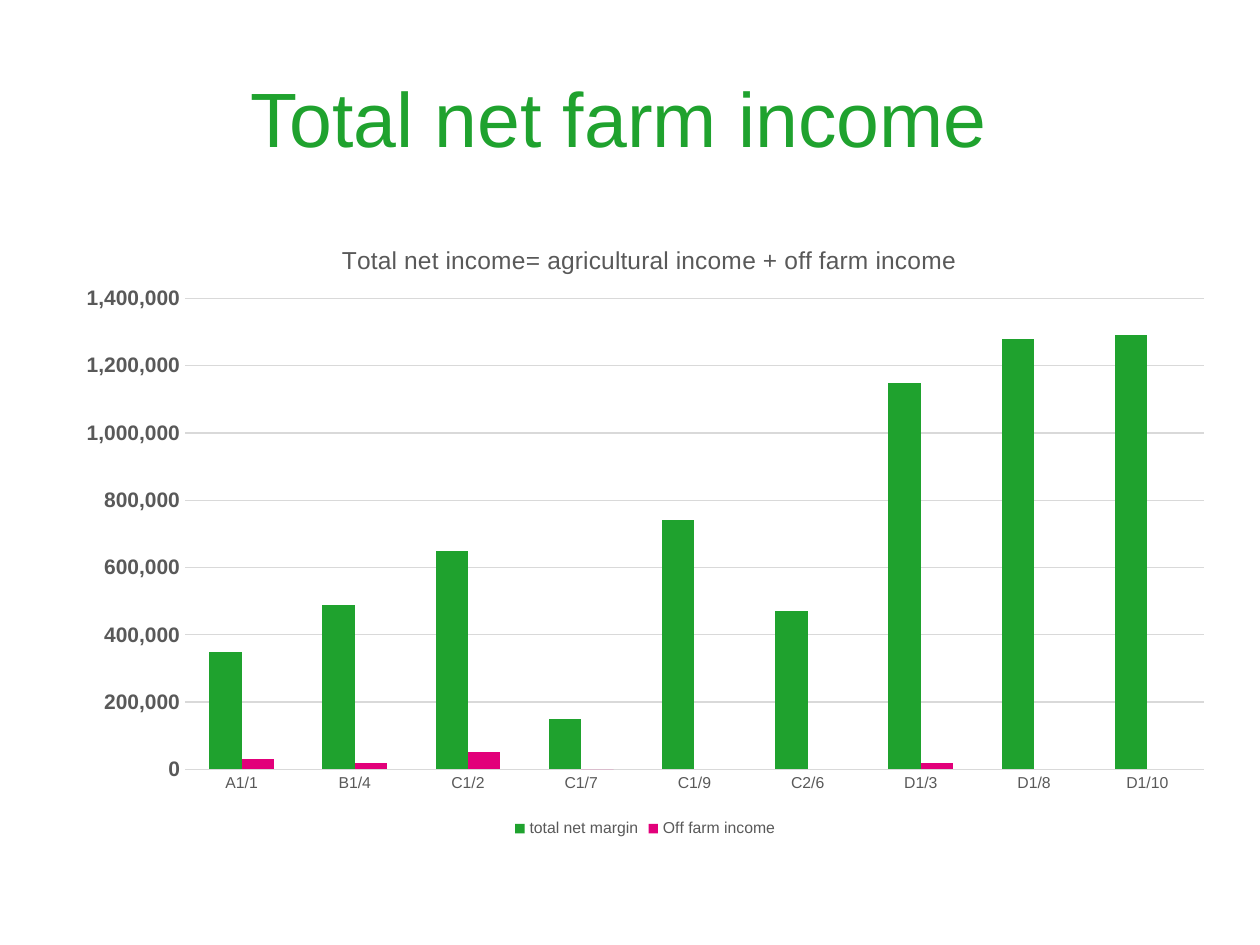
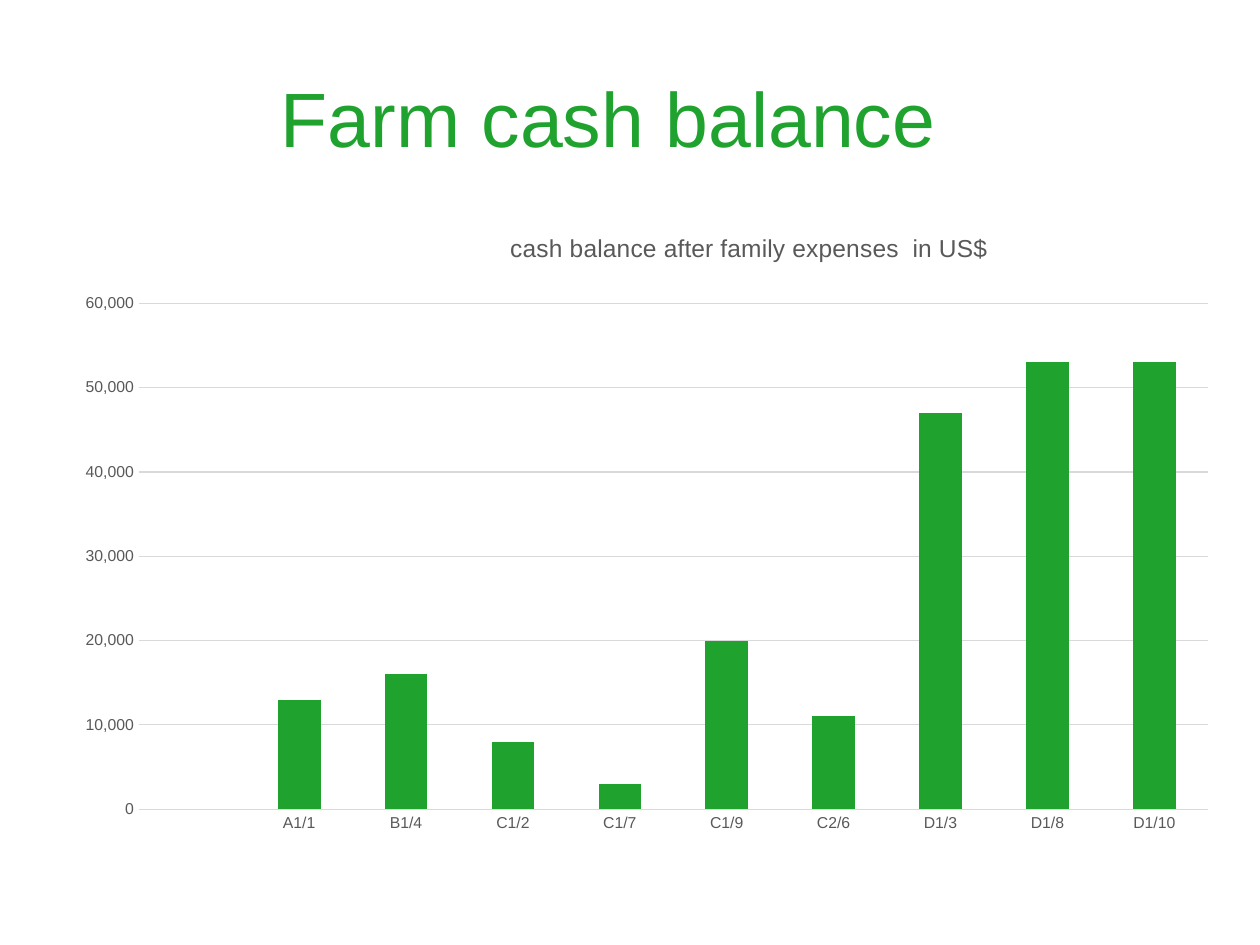
from dataclasses import dataclass
from typing import Optional

from pptx import Presentation
from pptx import util as u
from pptx.chart.data import CategoryChartData
from pptx.dml.color import RGBColor
from pptx.enum import chart as ch
from pptx.enum import text
from pptx.oxml import ns, parse_xml

GREEN, PINK, GREY, GRID = "1FA22E", "E2007A", "595959", "D9D9D9"
FONT = "Arial"
FARMS = ("A1/1", "B1/4", "C1/2", "C1/7", "C1/9", "C2/6", "D1/3", "D1/8", "D1/10")


@dataclass(frozen=True)
class Box:
    x: float
    y: float
    w: float = 0
    h: float = 0


@dataclass(frozen=True)
class Series:
    name: str
    color: str
    values: tuple[Optional[int], ...]


@dataclass(frozen=True)
class ChartSlide:
    title: str
    title_inset: float  # right inset that moves the centred title to the left
    caption: str
    caption_at: Box
    frame: Box
    plot: Box
    categories: tuple[str, ...]
    series: tuple[Series, ...]
    axis_max: int
    axis_step: int
    axis_font: dict
    legend: bool


TITLE_BOX = Box(36, 21.6, 648, 90)
SMALL = {"size": u.Pt(9), "bold": False}

SLIDES = (
    ChartSlide(
        title="Total net farm income", title_inset=19.4,
        caption="Total net income= agricultural income + off farm income",
        caption_at=Box(192.8, 137),
        frame=Box(36, 121.7, 665.3, 360), plot=Box(105.7, 170.6, 582.3, 269.1),
        categories=FARMS,
        series=(
            Series("total net margin", GREEN,
                   (350000, 490000, 650000, 150000, 740000, 470000,
                    1150000, 1280000, 1290000)),
            Series("Off farm income", PINK,
                   (30000, 20000, 50000, 0, None, None, 20000, None, None)),
        ),
        axis_max=1400000, axis_step=200000,
        axis_font={"size": u.Pt(12), "bold": True}, legend=True,
    ),
    ChartSlide(
        title="Farm cash balance", title_inset=31.6,
        caption="cash balance after family expenses  in US$",
        caption_at=Box(289, 130),
        frame=Box(36, 126, 667.4, 356.4), plot=Box(79.4, 173.4, 610.9, 289.1),
        categories=("",) + FARMS,
        series=(
            Series("Series 1", GREEN,
                   (None, 13000, 16000, 8000, 3000, 20000, 11000,
                    47000, 53000, 53000)),
        ),
        axis_max=60000, axis_step=10000, axis_font=SMALL, legend=False,
    ),
)


def rgb(color: str) -> RGBColor:
    return RGBColor.from_string(color)


def points(box: Box) -> tuple:
    return tuple(u.Pt(v) for v in (box.x, box.y, box.w, box.h))


def set_attrs(target, values: dict) -> None:
    for name, value in values.items():
        setattr(target, name, value)


def style_font(font, color: str, values: dict) -> None:
    set_attrs(font, {"name": FONT, **values})
    font.color.rgb = rgb(color)


def place(parent, index: int, box: Box, frame: Box) -> None:
    """Fix a chart part at a slide position given in points."""
    for old in parent.findall(ns.qn("c:layout")):
        parent.remove(old)
    values = {"x": (box.x - frame.x) / frame.w, "y": (box.y - frame.y) / frame.h}
    if box.w:
        values |= {"w": box.w / frame.w, "h": box.h / frame.h}
    target = '<c:layoutTarget val="inner"/>' if box.w else ""
    modes = "".join(f'<c:{k}Mode val="edge"/>' for k in "xy")
    sizes = "".join(f'<c:{k} val="{v:.4f}"/>' for k, v in values.items())
    parent.insert(index, parse_xml(
        f'<c:layout {ns.nsdecls("c")}><c:manualLayout>'
        f"{target}{modes}{sizes}</c:manualLayout></c:layout>"))


def add_title(s, item: ChartSlide) -> None:
    tf = s.shapes.add_textbox(*points(TITLE_BOX)).text_frame
    set_attrs(tf, {"word_wrap": True, "margin_right": u.Pt(item.title_inset),
                   "vertical_anchor": text.MSO_ANCHOR.MIDDLE})
    p = tf.paragraphs[0]
    p.alignment = text.PP_ALIGN.CENTER
    r = p.add_run()
    r.text = item.title
    style_font(r.font, GREEN, {"size": u.Pt(44)})


def style_axes(chart, item: ChartSlide) -> None:
    value_axis = chart.value_axis
    for axis, font in ((chart.category_axis, SMALL), (value_axis, item.axis_font)):
        set_attrs(axis, {"major_tick_mark": ch.XL_TICK_MARK.NONE,
                         "minor_tick_mark": ch.XL_TICK_MARK.NONE})
        axis.format.line.fill.background()
        style_font(axis.tick_labels.font, GREY, font)
    set_attrs(value_axis, {"minimum_scale": 0, "maximum_scale": item.axis_max,
                           "major_unit": item.axis_step,
                           "has_major_gridlines": True})
    set_attrs(value_axis.tick_labels, {"number_format": "#,##0",
                                       "number_format_is_linked": False})
    line = value_axis.major_gridlines.format.line
    line.color.rgb = rgb(GRID)
    line.width = u.Pt(0.75)


def add_caption(chart, item: ChartSlide) -> None:
    chart.has_title = True
    title = chart.chart_title
    title.include_in_layout = False
    r = title.text_frame.paragraphs[0].add_run()
    r.text = item.caption
    style_font(r.font, GREY, {"size": u.Pt(14), "bold": False})
    place(chart._chartSpace.chart.find(ns.qn("c:title")), 1,
          item.caption_at, item.frame)


def add_column_chart(s, item: ChartSlide) -> None:
    data = CategoryChartData(number_format="#,##0")
    data.categories = item.categories
    for series in item.series:
        data.add_series(series.name, series.values)
    chart = s.shapes.add_chart(ch.XL_CHART_TYPE.COLUMN_CLUSTERED,
                               *points(item.frame), data).chart
    style_font(chart.font, "000000", {"size": u.Pt(10)})
    plot = chart.plots[0]
    set_attrs(plot, {"gap_width": 150, "overlap": 0, "vary_by_categories": False})
    for column, series in zip(plot.series, item.series):
        column.format.fill.solid()
        column.format.fill.fore_color.rgb = rgb(series.color)
    style_axes(chart, item)
    add_caption(chart, item)
    place(chart._chartSpace.chart.plotArea, 0, item.plot, item.frame)
    chart.has_legend = item.legend
    if item.legend:
        set_attrs(chart.legend, {"position": ch.XL_LEGEND_POSITION.BOTTOM,
                                 "include_in_layout": False})
        style_font(chart.legend.font, GREY, SMALL)


def main() -> None:
    prs = Presentation()
    set_attrs(prs, {"slide_width": u.Pt(720), "slide_height": u.Pt(540)})
    for item in SLIDES:
        s = prs.slides.add_slide(prs.slide_layouts[6])
        add_title(s, item)
        add_column_chart(s, item)
    prs.save("out.pptx")


if __name__ == "__main__":
    main()
